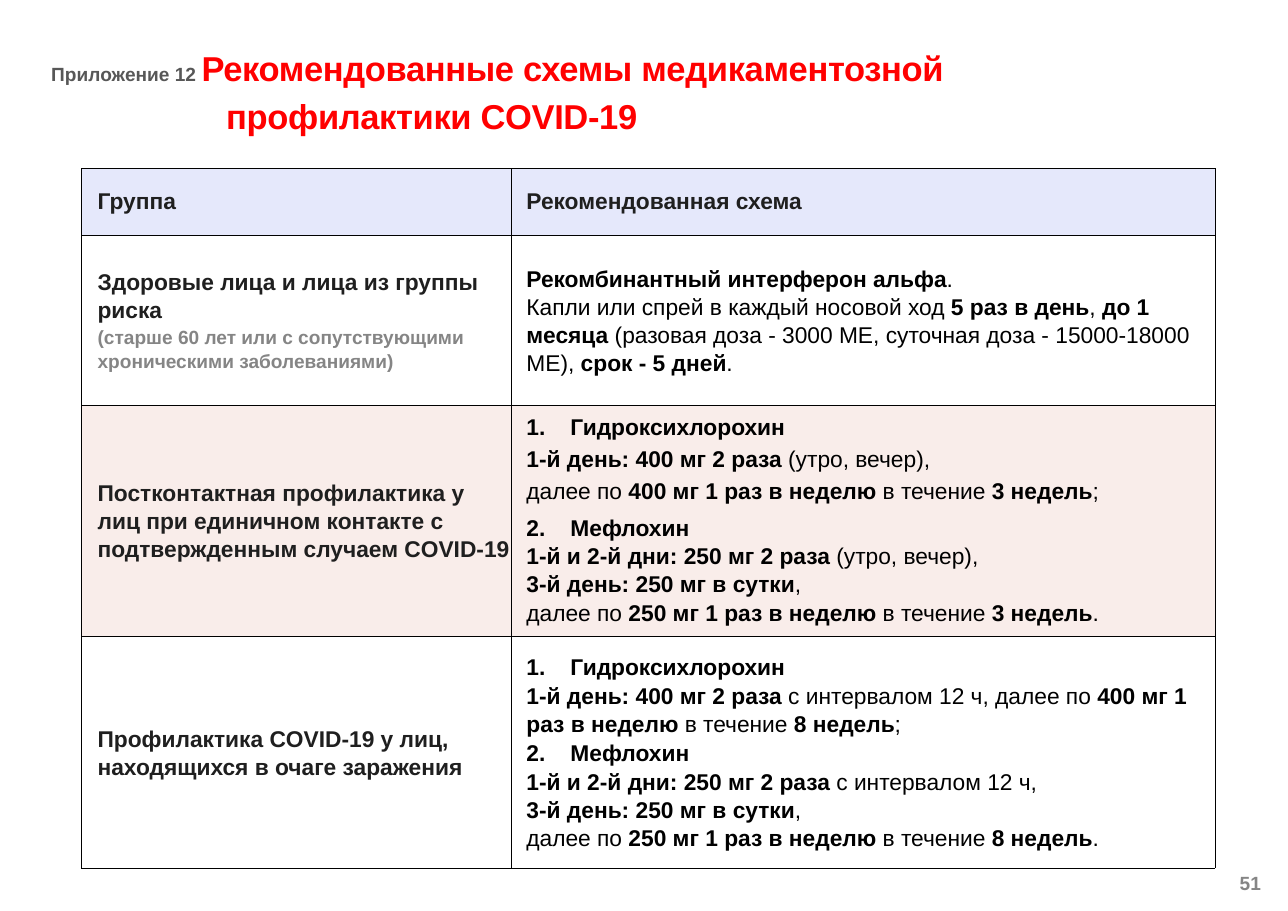
from lxml.etree import SubElement as Sub
from pptx import Presentation as Deck
from pptx.dml.color import RGBColor as Rgb
from pptx.enum.text import MSO_ANCHOR as Anchor, PP_ALIGN as Align
from pptx.oxml.ns import qn
from pptx.util import Pt

INK, BLACK, GRAY, RED = "1F1F1F", "000000", "858585", "FF0000"
LILAC, ROSE = "E5E8FB", "F9EDEA"
BODY = 31
LINE = {"line_spacing": Pt(38.4)}
FULL = {"alignment": Align.JUSTIFY}
EVEN = LINE | FULL
WIDE = FULL | {"space_after": Pt(8.4)}
LAST = FULL | {"space_after": Pt(12.6)}
PLAIN = {"margin_left": 0, "margin_right": 0, "margin_top": 0, "margin_bottom": 0}

DRUGS = ["*1.\tГидроксихлорохин*", "*2.\tМефлохин*"]
ROWS = [
    (90.7, LILAC, [("Группа", {})], [("*Рекомендованная схема*", {})]),
    (231.8, None,
     [("Здоровые лица и лица из группы риска", LINE),
      ("(старше 60 лет или с сопутствующими хроническими заболеваниями)",
       {"line_spacing": Pt(33.6)})],
     [("*Рекомбинантный интерферон альфа*.", LINE),
      ("Капли или спрей в каждый носовой ход *5 раз в день*, *до 1 месяца *"
       "(разовая доза - 3000 ME, суточная доза - 15000-18000 ME), "
       "*срок - 5 дней*.", LINE)]),
    (314.2, ROSE,
     [("Постконтактная профилактика у лиц при единичном контакте с "
       "подтвержденным случаем COVID-19", LINE)],
     [(DRUGS[0], WIDE),
      ("*1-й день: 400 мг 2 раза *(утро, вечер),", WIDE),
      ("далее по *400 мг 1 раз в неделю *в течение *3 недель*;", LAST),
      (DRUGS[1], EVEN),
      ("*1-й и 2-й дни: 250 мг 2 раза *(утро, вечер),", EVEN),
      ("*3-й день: 250 мг в сутки*,", EVEN),
      ("далее по *250 мг 1 раз в неделю *в течение *3 недель*.", EVEN)]),
    (316.4, None,
     [("Профилактика COVID-19 у лиц, находящихся в очаге заражения", LINE)],
     [(DRUGS[0], EVEN),
      ("*1-й день: 400 мг 2 раза *с интервалом 12 ч, далее по "
       "*400 мг 1 раз в неделю *в течение *8 недель*;",
       LINE | {"space_after": Pt(2.1)}),
      (DRUGS[1], EVEN),
      ("*1-й и 2-й дни: 250 мг 2 раза *с интервалом 12 ч,", EVEN),
      ("*3-й день: 250 мг в сутки*,", EVEN),
      ("далее по *250 мг 1 раз в неделю *в течение *8 недель*.", EVEN)]),
]


def color(code):
    return Rgb.from_string(code)


def style(item, form):
    for name, value in form.items():
        setattr(item, name, value)


def add_run(para, text, size, code, bold=True):
    run = para.add_run()
    run.text = text
    style(run.font, {"name": "Arial", "size": Pt(size), "bold": bold})
    run.font.color.rgb = color(code)
    return run


def add_para(frame, form, left=0, hang=0):
    first = frame.paragraphs[0]
    para = frame.add_paragraph() if first.runs else first
    style(para, form)
    props = para._p.get_or_add_pPr()
    props.set("marL", str(Pt(left + hang)))
    props.set("indent", str(-Pt(hang)))
    return para


def add_box(slide, left, top, width, height, wrap):
    frame = slide.shapes.add_textbox(Pt(left), Pt(top), Pt(width), Pt(height)).text_frame
    style(frame, PLAIN | {"word_wrap": wrap})
    return frame


def add_title(slide, left, top, width, height):
    frame = add_box(slide, left, top, width, height, True)
    head = add_para(frame, {"space_after": Pt(8.4)})
    add_run(head, "Приложение 12 ", 26, "575757")
    tail = add_para(frame, {"space_after": Pt(56.7)}, 238.3)
    for para, text in ((head, "Рекомендованные схемы медикаментозной"),
                       (tail, "профилактики COVID-19")):
        run = add_run(para, text, 47, RED)
        run._r.get_or_add_rPr().set("spc", "-50")


def add_edges(cell):
    props = cell._tc.get_or_add_tcPr()
    for rank, side in enumerate(("a:lnL", "a:lnR", "a:lnT", "a:lnB")):
        edge = Sub(props, qn(side), w=str(Pt(1)))
        Sub(Sub(edge, qn("a:solidFill")), qn("a:srgbClr"), val=BLACK)
        props.insert(rank, edge)


def fill_group(frame, lines):
    for text, form in lines:
        note = text.startswith("(")
        para = add_para(frame, form, 22)
        add_run(para, text, 26 if note else BODY, GRAY if note else INK)


def fill_plan(frame, lines, code):
    for text, form in lines:
        para = add_para(frame, form, 21, 60 if text in DRUGS else 0)
        for rank, part in enumerate(text.split("*")):
            if part:
                add_run(para, part, BODY, code, rank % 2 == 1)


def add_grid(slide, left, top, width, height):
    shape = slide.shapes.add_table(len(ROWS), 2, Pt(left), Pt(top), Pt(width), Pt(height))
    grid = shape.table
    style(grid, {"first_row": False, "horz_banding": False})
    grid.columns[0].width = Pt(585)
    grid.columns[1].width = Pt(width - 585)
    for row, (tall, shade, group, plan) in zip(grid.rows, ROWS):
        row.height = Pt(tall)
        for cell in row.cells:
            style(cell, PLAIN | {"vertical_anchor": Anchor.MIDDLE})
            if shade:
                cell.fill.solid()
                cell.fill.fore_color.rgb = color(shade)
            else:
                cell.fill.background()
            add_edges(cell)
        fill_group(row.cells[0].text_frame, group)
        fill_plan(row.cells[1].text_frame, plan, INK if shade == LILAC else BLACK)


def add_page(slide, left, top, width, height):
    frame = add_box(slide, left, top, width, height, False)
    add_run(add_para(frame, {}), "51", 26, GRAY)


def main():
    deck = Deck()
    style(deck, {"slide_width": Pt(1754), "slide_height": Pt(1241)})
    slide = deck.slides.add_slide(deck.slide_layouts[6])
    add_title(slide, 69.8, 64, 1585.4, 131.8)
    add_grid(slide, 110.9, 229.5, 1543.7, 953.1)
    add_page(slide, 1688.2, 1186.4, 30, 23)
    deck.save("out.pptx")


if __name__ == "__main__":
    main()
